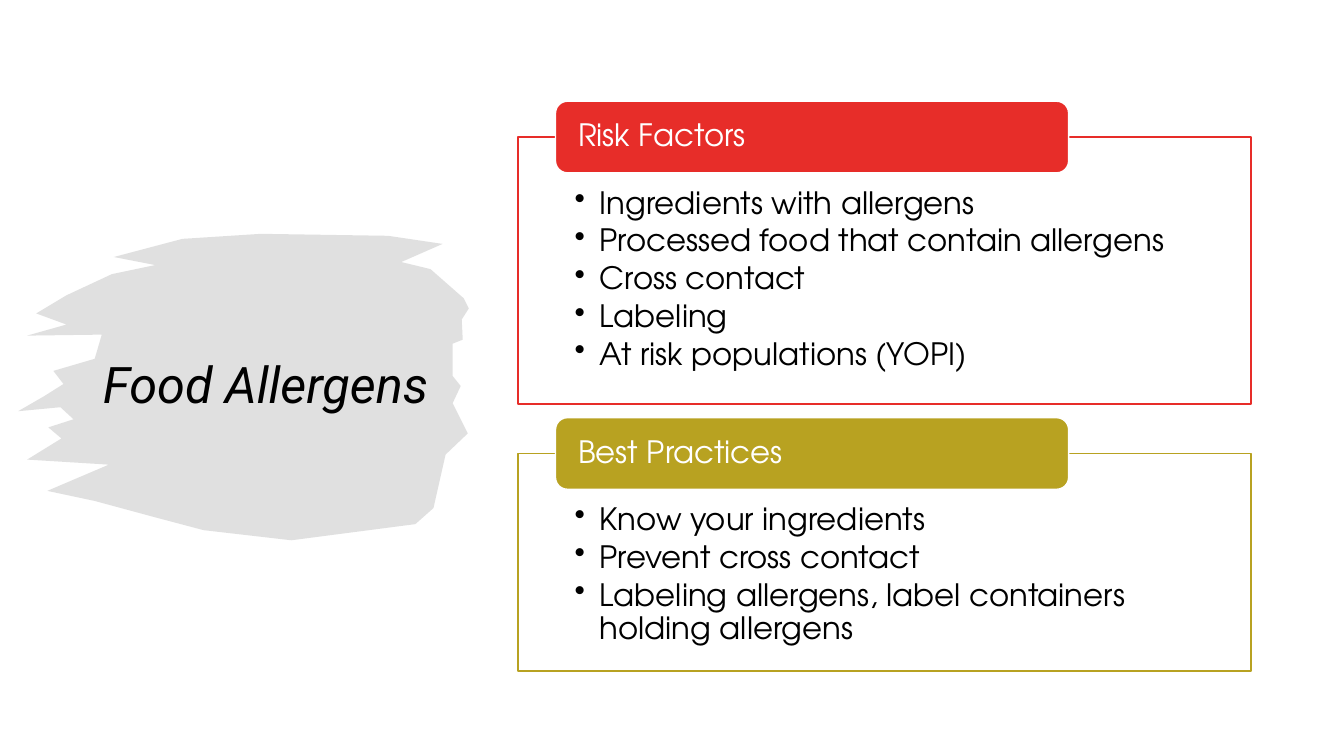
from lxml.etree import SubElement
from pptx import Presentation
from pptx.dml.color import RGBColor
from pptx.enum.shapes import MSO_SHAPE
from pptx.enum.text import MSO_ANCHOR, PP_ALIGN
from pptx.oxml.ns import qn
from pptx.util import Emu, Inches, Pt

COLORS = {
    "ink": "000000",
    "paper": "FFFFFF",
    "brush": "D9D9D9",
    "risk": "E72D29",
    "practice": "B8A221",
}

# Outline of the brush stroke, in hundredths of an inch on the slide
BRUSH_STROKE = [
    (259, 232), (385, 234), (439, 242), (398, 260), (427, 267), (460, 296),
    (465, 306), (458, 317), (459, 337), (449, 341), (449, 373), (457, 383),
    (449, 400), (464, 430), (442, 451), (430, 504), (412, 520), (289, 536),
    (202, 526), (153, 513), (94, 497), (47, 487), (108, 461), (27, 456),
    (61, 435), (48, 424), (73, 416), (60, 404), (18, 408), (44, 393),
    (63, 381), (53, 368), (94, 356), (101, 332), (27, 333), (66, 322),
    (36, 311), (66, 293), (111, 272), (154, 263), (113, 255), (181, 237),
]

PANELS = [
    ("Risk Factors", "risk", 35.33, [
        "Ingredients with allergens",
        "Processed food that contain allergens",
        "Cross contact",
        "Labeling",
        "At risk populations (YOPI)",
    ]),
    ("Best Practices", "practice", 28.8, [
        "Know your ingredients",
        "Prevent cross contact",
        "Labeling allergens, label containers holding allergens",
    ]),
]
FIRST_PANEL_TOP = 18.13
PANEL_GAP = 6.53
PANEL_LEFT, PANEL_WIDTH = 38.55, 54.53
HEADER_LEFT, HEADER_WIDTH, HEADER_HEIGHT = 41.33, 38.18, 9.47


def color(name):
    return RGBColor.from_string(COLORS[name])


def write_text(frame, lines, font="TeX Gyre Adventor", size=22, ink="ink", italic=False,
               bullet=False, anchor=MSO_ANCHOR.MIDDLE, insets=(0.1, 0.05, 0.1, 0.05)):
    frame.word_wrap = True
    frame.vertical_anchor = anchor
    frame.margin_left, frame.margin_top, frame.margin_right, frame.margin_bottom = map(Inches, insets)
    for index, line in enumerate(lines):
        paragraph = frame.paragraphs[0] if index == 0 else frame.add_paragraph()
        paragraph.alignment = PP_ALIGN.LEFT
        paragraph.line_spacing = 0.9
        paragraph.space_before = Pt(0)
        if bullet:
            paragraph.level = 1
            paragraph.space_after = Pt(0.15 * size)
            properties = paragraph._p.get_or_add_pPr()
            properties.set("marL", str(Inches(0.25)))
            properties.set("indent", str(-Inches(0.25)))
            SubElement(properties, qn("a:buChar"), char="•")
        run = paragraph.add_run()
        run.text = line
        run.font.name = font
        run.font.size = Pt(size)
        run.font.italic = italic
        run.font.color.rgb = color(ink)


class SlideBuilder:
    """Draws on one slide; positions are percentages of the slide's width and height."""

    def __init__(self, presentation):
        self.width = presentation.slide_width
        self.height = presentation.slide_height
        self.slide = presentation.slides.add_slide(presentation.slide_layouts[5])

    def box(self, left, top, width, height):
        return (Emu(round(self.width * left / 100)), Emu(round(self.height * top / 100)),
                Emu(round(self.width * width / 100)), Emu(round(self.height * height / 100)))

    def style(self, shape, fill, line=None, opacity=100):
        shape.shadow.inherit = False
        shape.fill.solid()
        shape.fill.fore_color.rgb = color(fill)
        if opacity < 100:
            fill_color = shape._element.spPr.find(qn("a:solidFill"))[0]
            SubElement(fill_color, qn("a:alpha"), val=str(opacity * 1000))
        if line:
            shape.line.color.rgb = color(line)
            shape.line.width = Pt(1)
        else:
            shape.line.fill.background()

    def brush_stroke(self, points):
        builder = self.slide.shapes.build_freeform(*points[0], scale=Inches(0.01))
        builder.add_line_segments(points[1:], close=True)
        self.style(builder.convert_to_shape(), "brush", opacity=80)

    def title(self, text, *place):
        title = self.slide.shapes.title
        title.left, title.top, title.width, title.height = self.box(*place)
        write_text(title.text_frame, [text], font="Roboto", size=36, italic=True)
        # Bring the title in front of the brush stroke
        self.slide.shapes._spTree.append(title._element)

    def shape(self, kind, place, fill, line, opacity=100):
        shape = self.slide.shapes.add_shape(kind, *self.box(*place))
        self.style(shape, fill, line, opacity)
        return shape

    def panel(self, heading, accent, top, height, items):
        """Outlined list with a coloured header centred on its top edge."""
        body = self.shape(MSO_SHAPE.RECTANGLE, (PANEL_LEFT, top, PANEL_WIDTH, height),
                          "paper", accent, opacity=90)
        write_text(body.text_frame, items, bullet=True, anchor=MSO_ANCHOR.TOP,
                   insets=(0.56, 0.5, 0.56, 0.17))
        header = self.shape(MSO_SHAPE.ROUNDED_RECTANGLE,
                            (HEADER_LEFT, top - HEADER_HEIGHT / 2, HEADER_WIDTH, HEADER_HEIGHT),
                            accent, "paper")
        write_text(header.text_frame, [heading], ink="paper", insets=(0.19, 0, 0.19, 0))


def main():
    presentation = Presentation()
    presentation.slide_width = Inches(13.33)
    presentation.slide_height = Inches(7.5)
    builder = SlideBuilder(presentation)
    builder.brush_stroke(BRUSH_STROKE)
    builder.title("Food Allergens", 6.9, 21.87, 26.4, 58.67)
    top = FIRST_PANEL_TOP
    for heading, accent, height, items in PANELS:
        builder.panel(heading, accent, top, height, items)
        top += height + PANEL_GAP
    presentation.save("out.pptx")


if __name__ == "__main__":
    main()
